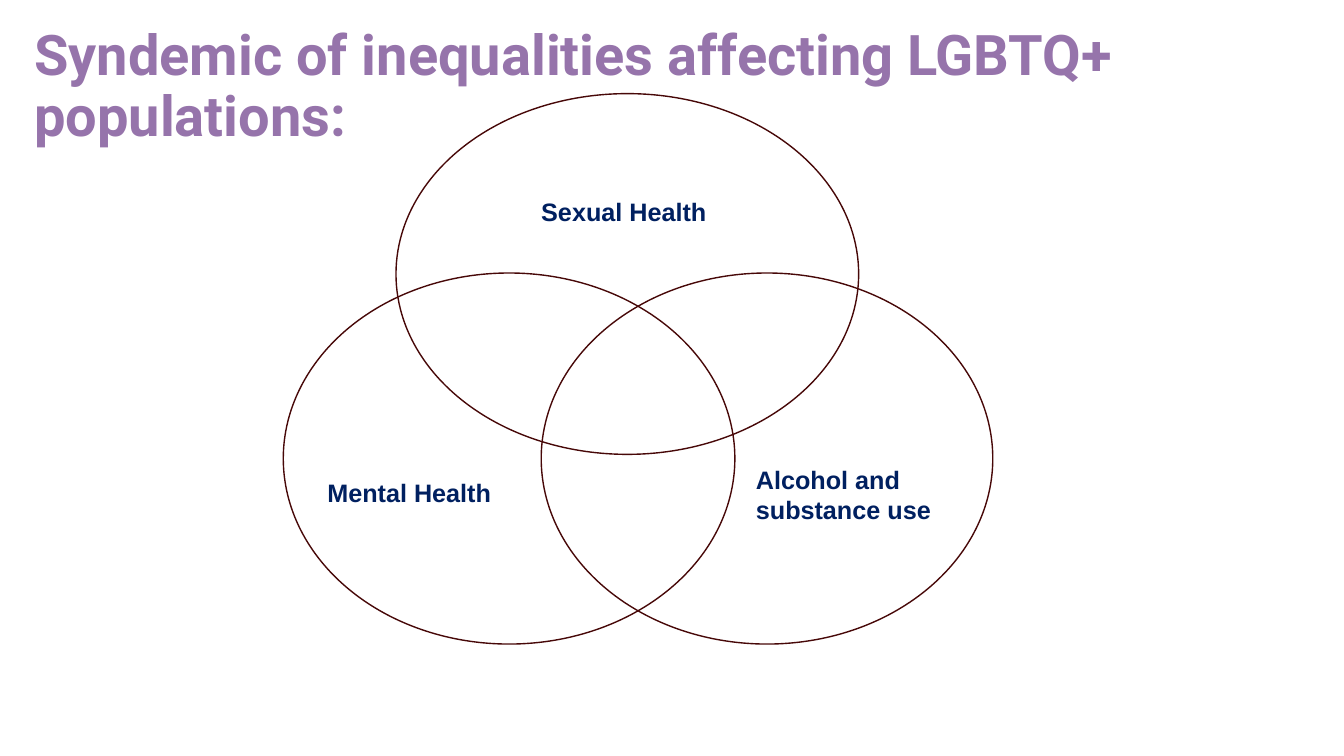
from pptx import Presentation
from pptx.dml.color import RGBColor
from pptx.enum.shapes import MSO_SHAPE
from pptx.enum.text import MSO_ANCHOR, PP_ALIGN
from pptx.util import Cm, Pt

TITLE = "Syndemic of inequalities affecting LGBTQ+ populations:"
TITLE_BOX = (0.61, 0.56, 29.41, 1.8)
RINGS = [
    ((9.98, 2.36, 11.66, 9.09), "white"),
    ((7.14, 6.88, 11.38, 9.35), None),
    ((13.64, 6.88, 11.38, 9.35), None),
]
LABELS = [
    ("Sexual Health", (13.39, 4.83, 5.94, 1.02)),
    ("Alcohol and substance use", (18.8, 11.58, 5.94, 1.8)),
    ("Mental Health", (8, 11.91, 5.94, 1.02)),
]
COLORS = {"white": "FFFFFF", "ring": "470808", "title": "9674AB", "label": "002060"}
FONTS = {
    "title": {"name": "Roboto", "size": Pt(40), "bold": True},
    "label": {"name": "Arial", "size": Pt(18), "bold": True},
}


def color(key):
    return RGBColor.from_string(COLORS[key])


def place(box):
    return [Cm(n) for n in box]


def write(shape, text, kind):
    frame = shape.text_frame
    frame.word_wrap = True
    frame.vertical_anchor = MSO_ANCHOR.TOP
    para = frame.paragraphs[0]
    para.alignment = PP_ALIGN.LEFT
    run = para.add_run()
    run.text = text
    for key, value in FONTS[kind].items():
        setattr(run.font, key, value)
    run.font.color.rgb = color(kind)
    return para


deck = Presentation()
deck.slide_width, deck.slide_height = Cm(33.87), Cm(19.05)
slide = deck.slides.add_slide(deck.slide_layouts[5])

title = slide.shapes.title
title.left, title.top, title.width, title.height = place(TITLE_BOX)
para = write(title, TITLE, "title")
para.line_spacing = 0.9
para.space_before = Pt(0)

for box, fill in RINGS:
    ring = slide.shapes.add_shape(MSO_SHAPE.OVAL, *place(box))
    ring.shadow.inherit = False
    if fill:
        ring.fill.solid()
        ring.fill.fore_color.rgb = color(fill)
    else:
        ring.fill.background()
    ring.line.color.rgb = color("ring")
    ring.line.width = Pt(1)

for text, box in LABELS:
    write(slide.shapes.add_textbox(*place(box)), text, "label")

deck.save("out.pptx")
